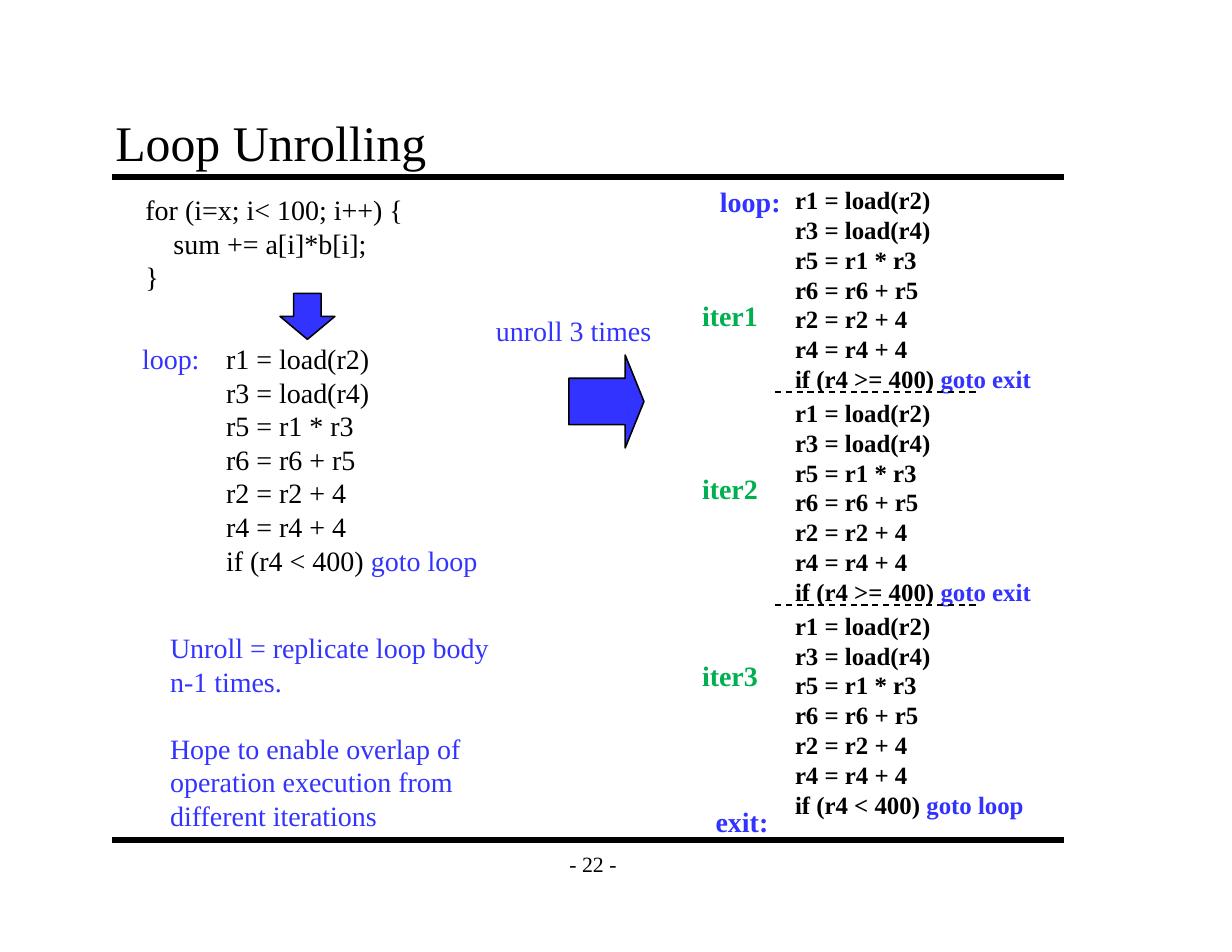
from pptx import Presentation, util as u
from pptx.dml.color import RGBColor
from pptx.enum import dml, shapes, text
from pptx.oxml.ns import qn
from lxml import etree

FONT = "Times New Roman"
BLACK, BLUE, GREEN = "000000", "3333FF", "00B050"
LEFT, RIGHT = 1, 9.5            # ends of the two rules
CODE_X, LABEL_X = 7, 6.17       # columns of the unrolled code
ITER_TOP, ITER_STEP = 1.6, 1.9  # rows of the unrolled code
LOOP_BODY = ["r1 = load(r2)", "r3 = load(r4)", "r5 = r1 * r3",
             "r6 = r6 + r5", "r2 = r2 + 4", "r4 = r4 + 4"]


def color(value):
    return RGBColor.from_string(value)


def add_text(slide, box, lines, size=18, ink=BLACK, bold=False, inset=(0.1, 0.05), **frame_format):
    """Each line is a string or a list of (words, colour) pairs."""
    frame = slide.shapes.add_textbox(*map(u.Inches, box)).text_frame
    across, down = map(u.Inches, inset)
    settings = {"word_wrap": False, "margin_left": across, "margin_right": across,
                "margin_top": down, "margin_bottom": down, **frame_format}
    for name, value in settings.items():
        setattr(frame, name, value)
    for number, line in enumerate(lines):
        paragraph = frame.add_paragraph() if number else frame.paragraphs[0]
        for words, tint in [(line, ink)] if isinstance(line, str) else line:
            run = paragraph.add_run()
            run.text = words
            for name, value in {"name": FONT, "size": u.Pt(size), "bold": bold}.items():
                setattr(run.font, name, value)
            run.font.color.rgb = color(tint)
    return frame


def add_code(slide, box, test, target, **style):
    add_text(slide, box, LOOP_BODY + [[(f"if ({test}) ", BLACK), (f"goto {target}", BLUE)]], **style)


def add_rule(slide, start, end, y, width, dash=None):
    ends = map(u.Inches, (start, y, end, y))
    rule = slide.shapes.add_connector(shapes.MSO_CONNECTOR.STRAIGHT, *ends)
    rule.line.color.rgb = color(BLACK)
    rule.line.width = u.Pt(width)
    if dash:
        rule.line.dash_style = dash
    etree.SubElement(rule._element.spPr, qn("a:effectLst"))


def add_arrow(slide, kind, box, adjustments=(0.5, 0.5)):
    arrow = slide.shapes.add_shape(kind, *map(u.Inches, box))
    for number, value in enumerate(adjustments):
        arrow.adjustments[number] = value
    arrow.shadow.inherit = False
    arrow.fill.solid()
    arrow.fill.fore_color.rgb = color(BLUE)
    arrow.line.color.rgb = color(BLACK)
    arrow.line.width = u.Pt(1)


def add_frame(slide):
    for y in (1.58, 7.5):
        add_rule(slide, LEFT, RIGHT, y, 4)
    add_text(slide, (0.92, 0.92, 8.5, 0.67), ["Loop Unrolling"], size=32, inset=(0.11, 0.06),
             word_wrap=True, vertical_anchor=text.MSO_ANCHOR.BOTTOM)
    page = add_text(slide, (4.92, 7.5, 0.75, 0.42), ["- 22 -"], size=14, inset=(0.11, 0.06),
                    vertical_anchor=text.MSO_ANCHOR.MIDDLE)
    page.paragraphs[0].alignment = text.PP_ALIGN.CENTER


def add_original_loop(slide):
    # Source code, its body indented
    source = add_text(slide, (1.2, 1.67, 2.52, 1.01),
                      ["for (i=x; i< 100; i++) {", "sum += a[i]*b[i];", "}"])
    source.paragraphs[1]._p.get_or_add_pPr().set("marL", str(u.Inches(0.25)))
    add_arrow(slide, shapes.MSO_SHAPE.DOWN_ARROW, (2.5, 2.62, 0.49, 0.41))

    # Assembly code
    add_text(slide, (1.17, 3, 0.8, 0.4), ["loop:"], ink=BLUE)
    add_code(slide, (1.92, 3, 2.55, 2.2), "r4 < 400", "loop")

    # Explanation, with a gap of one line between its two parts
    notes = add_text(slide, (1.42, 5.58, 3.2, 1.92),
                     ["Unroll = replicate loop body", "n-1 times.", "Hope to enable overlap of",
                      "operation execution from", "different iterations"], ink=BLUE)
    notes.paragraphs[2].space_before = u.Pt(21.5)


def add_unrolled_loop(slide):
    # Step between the two halves
    add_text(slide, (4.33, 2.75, 1.7, 0.4), ["unroll 3 times"], ink=BLUE)
    add_arrow(slide, shapes.MSO_SHAPE.RIGHT_ARROW, (5.08, 3.17, 0.67, 0.83), (0.5, 0.25))

    # Three iterations, parted by dashed lines
    exits = [("r4 >= 400", "exit"), ("r4 >= 400", "exit"), ("r4 < 400", "loop")]
    for number, ((test, target), label_y) in enumerate(zip(exits, (2.62, 4.16, 5.83))):
        top = ITER_TOP + number * ITER_STEP
        add_code(slide, (CODE_X, top, 2.45, 1.98), test, target, size=16, bold=True)
        add_text(slide, (LABEL_X, label_y, 0.8, 0.4), [f"iter{number + 1}"], ink=GREEN, bold=True)
        if number:
            add_rule(slide, 6.92, 8.75, top, 1, dml.MSO_LINE.DASH)

    # Jump targets
    for label, x, y in (("loop:", 6.33, ITER_TOP), ("exit:", 6.29, 7.13)):
        add_text(slide, (x, y, 0.85, 0.4), [label], ink=BLUE, bold=True)


def main():
    deck = Presentation()
    deck.slide_width, deck.slide_height = u.Inches(11), u.Inches(8.5)
    slide = deck.slides.add_slide(deck.slide_layouts[6])
    add_frame(slide)
    add_original_loop(slide)
    add_unrolled_loop(slide)
    deck.save("out.pptx")


if __name__ == "__main__":
    main()
